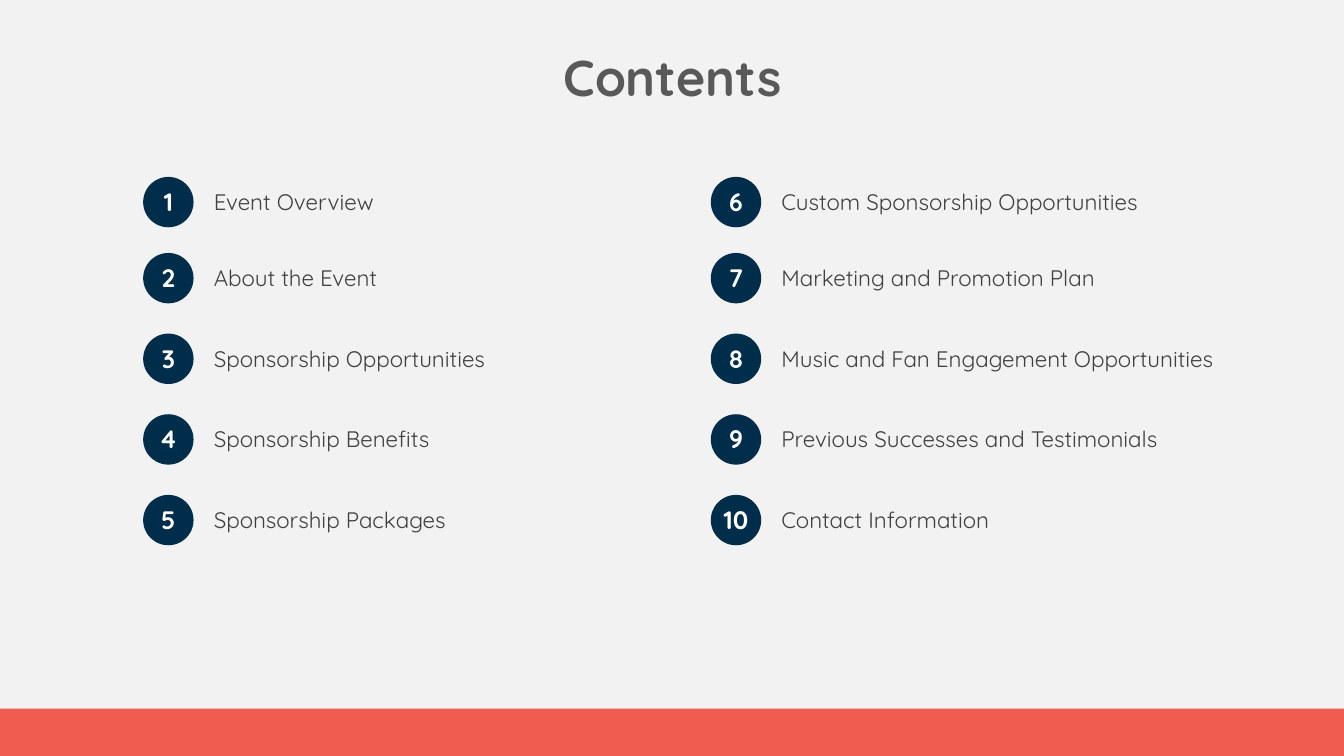
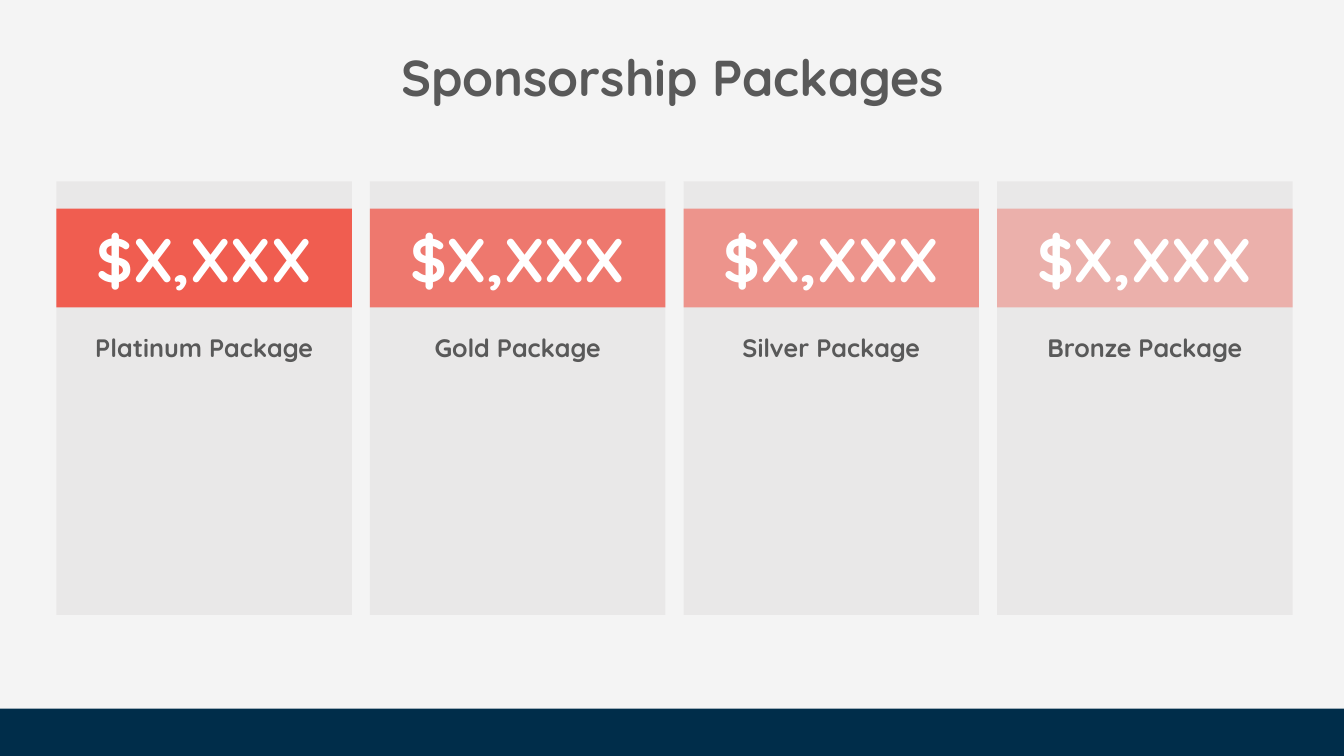
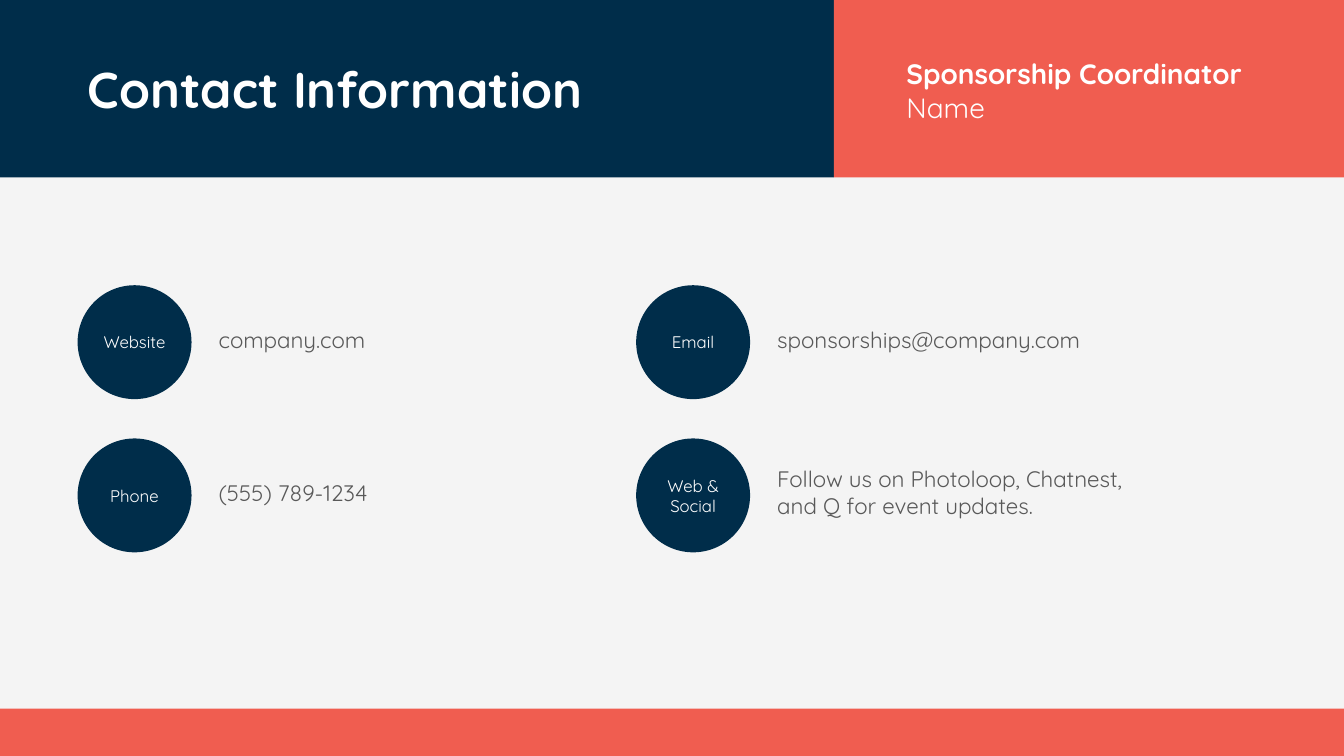
from lxml.etree import SubElement
from pptx import Presentation
from pptx.dml.color import RGBColor
from pptx.enum.shapes import MSO_SHAPE
from pptx.enum.text import MSO_ANCHOR, MSO_AUTO_SIZE, PP_ALIGN
from pptx.oxml.ns import qn
from pptx.util import Inches, Pt

NAVY = RGBColor(0x00, 0x2D, 0x4A)
CORAL = RGBColor(0xF0, 0x5D, 0x50)
PANEL = RGBColor(0xE7, 0xE6, 0xE6)
WHITE = RGBColor(0xFF, 0xFF, 0xFF)
GRAY = RGBColor(0x59, 0x59, 0x59)
DARK = RGBColor(0x40, 0x40, 0x40)
PAPER = RGBColor(0xF4, 0xF4, 0xF4)
MIST = RGBColor(0xF2, 0xF2, 0xF2)

FONT = "Quicksand"
WIDTH, HEIGHT = 13.33, 7.5
BAND_HEIGHT = 0.47
TITLE_ONLY = 5
PLAIN_TABLE_STYLE = "{2D5ABB26-0587-4C30-8999-92F81FD0307C}"
TITLE_AREA = (2.02, 0.4, 9.3, 0.71)

TITLE = {"size": 36, "bold": True, "color": GRAY, "align": PP_ALIGN.CENTER}
HEADER_TITLE = {"size": 36, "bold": True, "color": WHITE}
ROLE = {"size": 20, "bold": True, "color": WHITE}
ROLE_NAME = {"size": 20, "color": WHITE}
NUMBER = {"size": 18, "bold": True, "color": WHITE, "align": PP_ALIGN.CENTER}
ENTRY = {"size": 16, "color": DARK}
PRICE = {"size": 44, "bold": True, "color": WHITE, "align": PP_ALIGN.CENTER}
PACKAGE = {"size": 18, "bold": True, "color": GRAY, "align": PP_ALIGN.CENTER}
LABEL = {"size": 12, "color": WHITE, "align": PP_ALIGN.CENTER}
DETAIL = {"size": 16, "color": GRAY}


class Deck:
    """Holds the shared style and the slide being built."""

    def __init__(self):
        self.deck = Presentation()
        self.deck.slide_width = Inches(WIDTH)
        self.deck.slide_height = Inches(HEIGHT)
        self.page = None

    def add_page(self, background, band):
        layout = self.deck.slide_layouts[TITLE_ONLY]
        self.page = self.deck.slides.add_slide(layout)
        fill = self.page.background.fill
        fill.solid()
        fill.fore_color.rgb = background
        self.shape(0, HEIGHT - BAND_HEIGHT, WIDTH, BAND_HEIGHT, band)

    def fill_frame(self, frame, lines, anchor=MSO_ANCHOR.MIDDLE,
                   margins=(0.1, 0.05, 0.1, 0.05)):
        """Fill a text frame with (text, style) lines; margins run left, top, right, bottom."""
        left, top, right, bottom = map(Inches, margins)
        layout = {
            "word_wrap": True, "auto_size": MSO_AUTO_SIZE.NONE, "vertical_anchor": anchor,
            "margin_left": left, "margin_top": top,
            "margin_right": right, "margin_bottom": bottom,
        }
        for name, value in layout.items():
            setattr(frame, name, value)
        for index, (text, style) in enumerate(lines):
            para = frame.add_paragraph() if index else frame.paragraphs[0]
            self.fill_line(para, text, style)

    def fill_line(self, para, text, style):
        para.alignment = style.get("align", PP_ALIGN.LEFT)
        span = para.add_run()
        span.text = text
        formats = {"name": FONT, "size": Pt(style["size"]), "bold": style.get("bold", False)}
        for name, value in formats.items():
            setattr(span.font, name, value)
        span.font.color.rgb = style["color"]

    def title(self, text, style, area=TITLE_AREA, fill=None, **layout):
        box = self.page.shapes.title
        box.left, box.top, box.width, box.height = map(Inches, area)
        if fill is not None:
            box.fill.solid()
            box.fill.fore_color.rgb = fill
        self.fill_frame(box.text_frame, [(text, style)], **layout)

    def shape(self, left, top, width, height, fill, lines=(), kind=MSO_SHAPE.RECTANGLE,
              opacity=100, **layout):
        box = self.page.shapes.add_shape(kind, *map(Inches, (left, top, width, height)))
        box.shadow.inherit = False
        box.line.fill.background()
        box.fill.solid()
        box.fill.fore_color.rgb = fill
        if opacity < 100:
            color = box.element.spPr.find(".//" + qn("a:srgbClr"))
            SubElement(color, qn("a:alpha"), val=str(opacity * 1000))
        if lines:
            self.fill_frame(box.text_frame, lines, **layout)

    def circle(self, left, top, size, lines=()):
        self.shape(left, top, size, size, NAVY, lines, MSO_SHAPE.OVAL, margins=(0, 0.05, 0, 0.05))

    def text(self, left, top, width, height, lines):
        box = self.page.shapes.add_textbox(*map(Inches, (left, top, width, height)))
        self.fill_frame(box.text_frame, lines)

    def table(self, left, top, widths, heights, rows):
        """Add an unfilled table; each cell is (text, style, left margin)."""
        area = map(Inches, (left, top, sum(widths), sum(heights)))
        frame = self.page.shapes.add_table(len(heights), len(widths), *area)
        frame.element.find(".//" + qn("a:tableStyleId")).text = PLAIN_TABLE_STYLE
        table = frame.table
        table.first_row = table.horz_banding = False
        for column, width in zip(table.columns, widths):
            column.width = Inches(width)
        for row, height, values in zip(table.rows, heights, rows):
            row.height = Inches(height)
            for cell, (text, style, margin) in zip(row.cells, values):
                cell.fill.background()
                cell.vertical_anchor = MSO_ANCHOR.MIDDLE
                cell.margin_left = Inches(margin)
                self.fill_line(cell.text_frame.paragraphs[0], text, style)


def build_contents(deck):
    deck.add_page(MIST, CORAL)
    deck.title("Contents", TITLE)
    columns = [
        (1.42, 1, ["Event Overview", "About the Event", "Sponsorship Opportunities",
                   "Sponsorship Benefits", "Sponsorship Packages"]),
        (7.05, 6, ["Custom Sponsorship Opportunities", "Marketing and Promotion Plan",
                   "Music and Fan Engagement Opportunities",
                   "Previous Successes and Testimonials", "Contact Information"]),
    ]
    table_top, circle_size = 1.65, 0.5
    heights = [0.71] + [0.8] * 4
    for left, first, entries in columns:
        row_top = table_top
        for height in heights:
            deck.circle(left, row_top + (height - circle_size) / 2, circle_size)
            row_top += height
        rows = [[(str(number), NUMBER, 0.1), (entry, ENTRY, 0.2)]
                for number, entry in enumerate(entries, first)]
        deck.table(left, table_top, [circle_size, 4.94], heights, rows)


def build_packages(deck):
    deck.add_page(PAPER, NAVY)
    deck.title("Sponsorship Packages", TITLE)
    width, pitch = 2.93, 3.11
    for index, level in enumerate(["Platinum", "Gold", "Silver", "Bronze"]):
        left = 0.56 + index * pitch
        deck.shape(left, 1.8, width, 4.3, PANEL, [(f"{level} Package", PACKAGE)], opacity=80,
                   anchor=MSO_ANCHOR.TOP, margins=(0.3, 1.5, 0.3, 0.3))
        deck.shape(left, 2.07, width, 0.98, CORAL, [("$X,XXX", PRICE)],
                   opacity=100 - 20 * index)


def build_contact(deck):
    deck.add_page(PAPER, CORAL)
    split, header_height = 8.27, 1.76
    deck.title("Contact Information", HEADER_TITLE, (0, 0, split, header_height), NAVY,
               margins=(0.87, 0.05, 0.1, 0.05))
    deck.shape(split, 0, WIDTH - split, header_height, CORAL,
               [("Sponsorship Coordinator", ROLE), ("Name", ROLE_NAME)],
               margins=(0.72, 0.08, 0.1, 0.05))
    contacts = [
        ("Website", "company.com"),
        ("Email", "sponsorships@company.com"),
        ("Phone", "(555) 789-1234"),
        ("Web & Social", "Follow us on Photoloop, Chatnest, and Q for event updates."),
    ]
    size = 1.13
    for index, (label, detail) in enumerate(contacts):
        row, column = divmod(index, 2)
        left, top = 0.77 + 5.54 * column, 2.83 + 1.52 * row
        deck.circle(left, top, size, [(label, LABEL)])
        deck.text(left + 1.3, top - 0.03, 4, size, [(detail, DETAIL)])


def main():
    deck = Deck()
    for build in (build_contents, build_packages, build_contact):
        build(deck)
    deck.deck.save("out.pptx")


if __name__ == "__main__":
    main()
